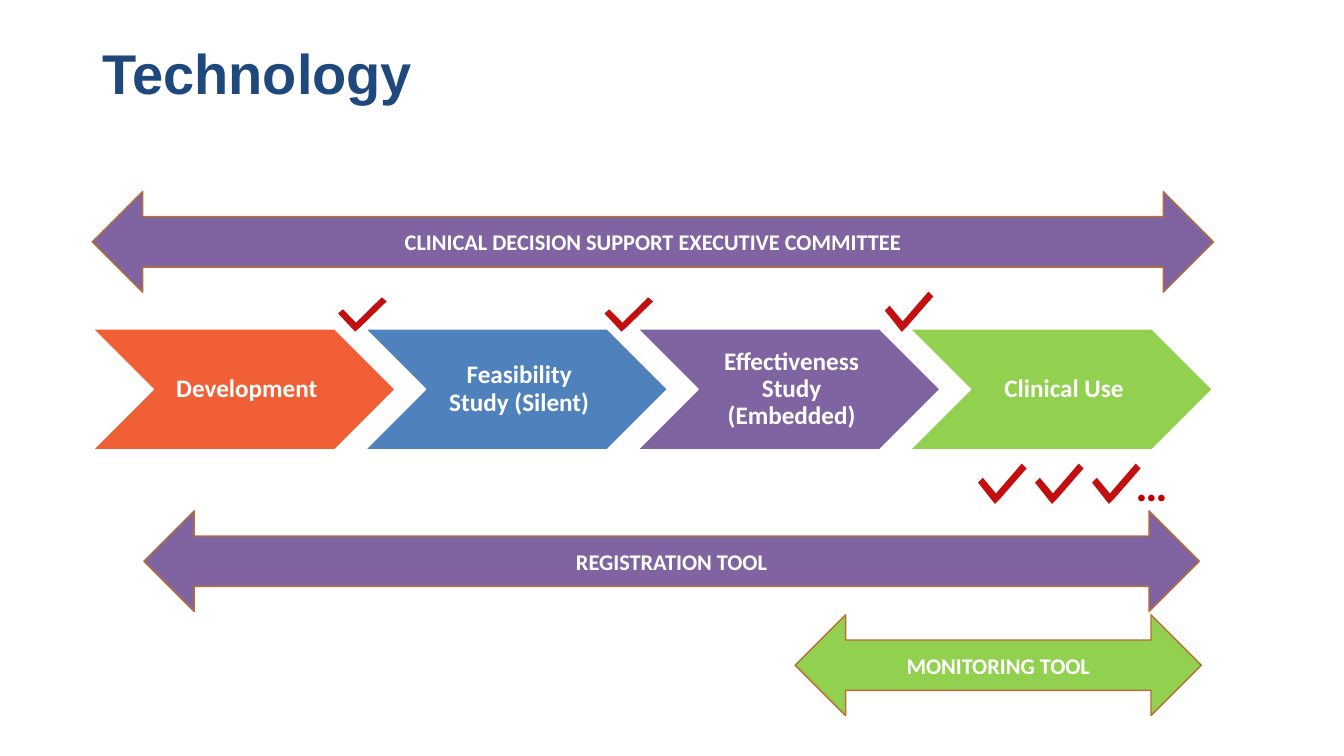
from lxml import etree
from pptx import Presentation
from pptx.dml.color import RGBColor
from pptx.enum import shapes, text
from pptx.oxml import ns
from pptx.util import Pt

COLORS = {
    "navy": "1F497D", "orange": "F05F36", "blue": "4F81BD", "purple": "8064A2",
    "green": "92D050", "red": "C00000", "brown": "B76F34", "white": "FFFFFF",
}
TITLE = "Technology"
STAGES = [
    ("Development", "orange"),
    ("Feasibility Study (Silent)", "blue"),
    ("Effectiveness Study (Embedded)", "purple"),
    ("Clinical Use", "green"),
]
STAGE_LEFT, STAGE_TOP, STAGE_STEP = 66.3, 234.9, 194.6
STAGE_SIZE = (216, 86.4)
SPANS = [
    ("CLINICAL DECISION SUPPORT EXECUTIVE COMMITTEE", "purple", 65.9, 136.8, 801),
    ("REGISTRATION TOOL", "purple", 102.7, 364.9, 754),
    ("MONITORING TOOL", "green", 568, 439.2, 290.2),
]
SPAN_HEIGHT = 72
GATE_CHECKS = [(241.5, 212.4, 24.5), (431.8, 212.4, 24.5), (632, 208.3, 28.8)]
USE_CHECKS = [(698.6 + 40.7 * i, 331.2, 28.8) for i in range(3)]
CHECK_WIDTH = 34.7
CHECK_OUTLINE = [
    (0.9, 0), (0.37, 0.74), (0.1, 0.35), (0, 0.47), (0.35, 1), (0.45, 0.88), (1, 0.12),
]


def color(name):
    return RGBColor.from_string(COLORS[name])


def paint(shape, fill, line=None):
    shape.shadow.inherit = False
    shape.fill.solid()
    shape.fill.fore_color.rgb = color(fill)
    if line:
        shape.line.color.rgb = color(line)
        shape.line.width = Pt(1)
    else:
        shape.line.fill.background()


def write(box, words, size, ink, font="Calibri", align=text.PP_ALIGN.CENTER,
          anchor=text.MSO_ANCHOR.MIDDLE, spacing=1.0):
    frame = box.text_frame
    frame.word_wrap = True
    frame.vertical_anchor = anchor
    para = frame.paragraphs[0]
    para.alignment = align
    para.line_spacing = spacing
    span = para.add_run()
    span.text = words
    span.font.name = font
    span.font.size = Pt(size)
    span.font.bold = True
    span.font.color.rgb = color(ink)


def add_stage(page, index, words, fill):
    left = STAGE_LEFT + index * STAGE_STEP
    stage = page.shapes.add_shape(
        shapes.MSO_SHAPE.CHEVRON, Pt(left), Pt(STAGE_TOP), *map(Pt, STAGE_SIZE))
    paint(stage, fill, "white")
    frame = stage.text_frame
    frame.margin_left = Pt(6)
    frame.margin_top = frame.margin_right = frame.margin_bottom = Pt(2)
    write(stage, words, 18, "white", spacing=0.9)


def add_span(page, words, fill, left, top, width):
    arrow = page.shapes.add_shape(
        shapes.MSO_SHAPE.LEFT_RIGHT_ARROW, Pt(left), Pt(top), Pt(width), Pt(SPAN_HEIGHT))
    paint(arrow, fill, "brown")
    write(arrow, words, 16, "white")


def add_check(page, left, top, height):
    corners = [(Pt(left + x * CHECK_WIDTH), Pt(top + y * height)) for x, y in CHECK_OUTLINE]
    builder = page.shapes.build_freeform(*corners[0])
    builder.add_line_segments(corners[1:], close=True)
    check = builder.convert_to_shape()
    paint(check, "red")
    tint = check.fill._xPr.find(".//" + ns.qn("a:srgbClr"))
    etree.SubElement(tint, ns.qn("a:alpha"), val="94000")


def main():
    deck = Presentation()
    deck.slide_width, deck.slide_height = Pt(960), Pt(540)
    page = deck.slides.add_slide(deck.slide_layouts[6])

    title = page.shapes.add_textbox(Pt(66), Pt(28.8), Pt(828), Pt(51))
    write(title, TITLE, 40, "navy", "Arial", text.PP_ALIGN.LEFT, spacing=0.9)
    for index, (words, fill) in enumerate(STAGES):
        add_stage(page, index, words, fill)
    for span in SPANS:
        add_span(page, *span)
    for check in GATE_CHECKS + USE_CHECKS:
        add_check(page, *check)
    more = page.shapes.add_textbox(Pt(804.2), Pt(322.6), Pt(36), Pt(46))
    write(more, "…", 32, "red", align=text.PP_ALIGN.LEFT, anchor=text.MSO_ANCHOR.TOP)

    deck.save("out.pptx")


if __name__ == "__main__":
    main()
